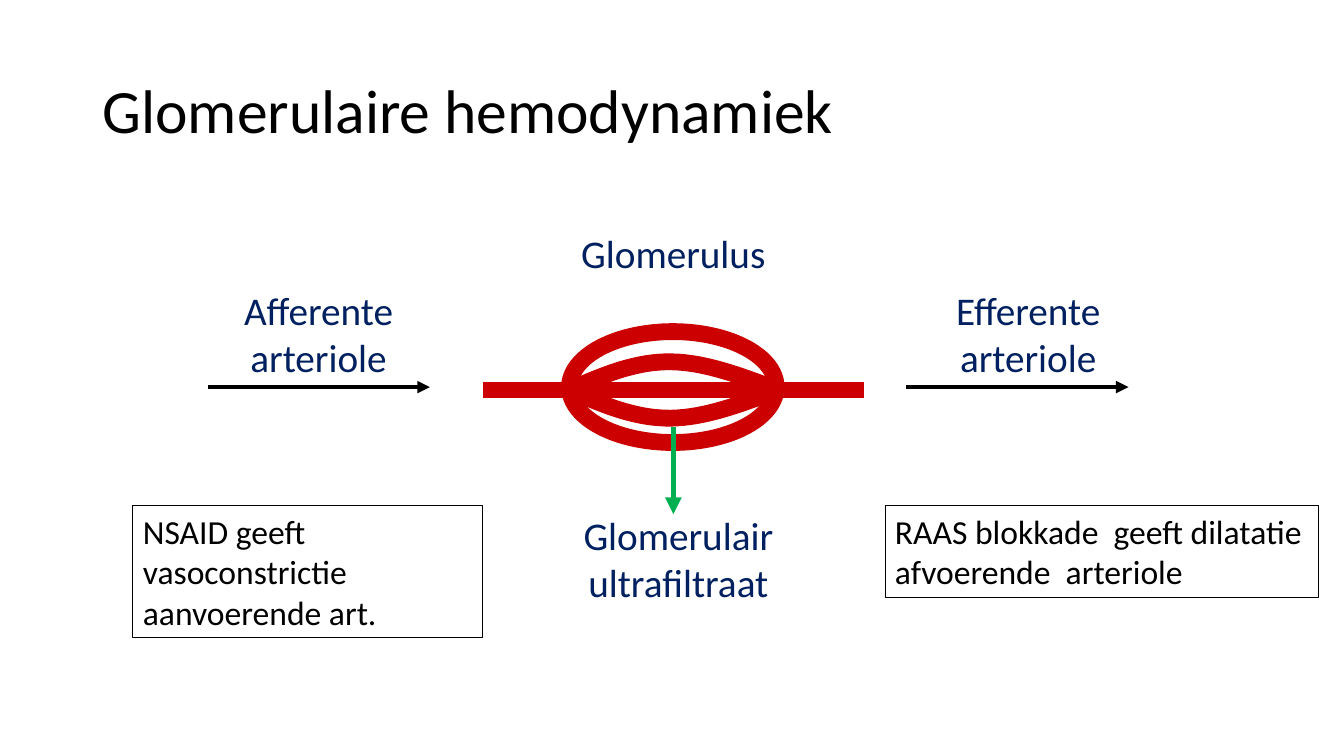
"""Build a slide on the blood flow through the glomerulus."""
from dataclasses import dataclass

import lxml.etree
import pptx
import pptx.dml.color
import pptx.enum.shapes
import pptx.enum.text
import pptx.oxml.ns
import pptx.util

Pt = pptx.util.Pt
qn = pptx.oxml.ns.qn
ALIGN = pptx.enum.text.PP_ALIGN
ANCHOR = pptx.enum.text.MSO_ANCHOR
SHAPE = pptx.enum.shapes.MSO_SHAPE
STRAIGHT = pptx.enum.shapes.MSO_CONNECTOR.STRAIGHT


@dataclass(frozen=True)
class Theme:
    """Colours, font and sizes of the slide."""
    font: str = "Calibri"
    ink: str = "000000"
    paper: str = "FFFFFF"
    label: str = "002060"
    blood: str = "CC0000"
    filtrate: str = "00B050"
    title_size: float = 44
    label_size: float = 28
    note_size: float = 24
    vessel_width: float = 12
    flow_width: float = 3
    filtrate_width: float = 4
    border_width: float = 0.75


THEME = Theme()
AXIS = 278.6
VESSEL_LEFT, TUFT_LEFT, TUFT_RIGHT, VESSEL_RIGHT = 344.9, 406.8, 554.4, 617
CAPILLARY_END = 548.6
CAPILLARY = (
    ((TUFT_LEFT, 0), (429.1, 10), (451.4, 19.4), (475.2, 20.1)),
    ((475.2, 20.1), (499, 20.8), (523.4, 12.2), (CAPILLARY_END, 2.8)),
)
STEPS = 16


def rgb(value):
    """Return a colour object for a hex value."""
    return pptx.dml.color.RGBColor.from_string(value)


def style_text(frame, text, size, colour, align=ALIGN.LEFT):
    """Write one formatted paragraph and return it."""
    frame.word_wrap = True
    frame.text = text
    para = frame.paragraphs[0]
    para.alignment = align
    for span in para.runs:
        span.font.name = THEME.font
        span.font.size = Pt(size)
        span.font.color.rgb = rgb(colour)
    return para


def style_line(shape, colour, width):
    """Set the colour and width of an outline."""
    shape.line.color.rgb = rgb(colour)
    shape.line.width = Pt(width)


def add_title(page, text):
    """Place and fill the title placeholder."""
    title = page.shapes.title
    title.left, title.top, title.width, title.height = Pt(66), Pt(28.8), Pt(828), Pt(104.4)
    title.text_frame.vertical_anchor = ANCHOR.MIDDLE
    para = style_text(title.text_frame, text, THEME.title_size, THEME.ink)
    para.line_spacing = 0.9


def add_label(page, text, left, top, height=74.9):
    """Add a centred caption."""
    box = page.shapes.add_textbox(Pt(left), Pt(top), Pt(204.5), Pt(height))
    style_text(box.text_frame, text, THEME.label_size, THEME.label, ALIGN.CENTER)


def add_note(page, text, left, width, height):
    """Add a bordered remark."""
    box = page.shapes.add_shape(SHAPE.RECTANGLE, Pt(left), Pt(361.4), Pt(width), Pt(height))
    box.shadow.inherit = False
    box.fill.solid()
    box.fill.fore_color.rgb = rgb(THEME.paper)
    style_line(box, THEME.ink, THEME.border_width)
    box.text_frame.vertical_anchor = ANCHOR.TOP
    style_text(box.text_frame, text, THEME.note_size, THEME.ink)


def add_line(shapes, start, end, colour, width):
    """Add a straight line without a shadow."""
    line = shapes.add_connector(STRAIGHT, *(Pt(value) for value in start + end))
    style_line(line, colour, width)
    lxml.etree.SubElement(line._element.spPr, qn("a:effectLst"))
    return line


def add_arrow(page, start, end, colour, width):
    """Add a straight line with an arrowhead at its end."""
    arrow = add_line(page.shapes, start, end, colour, width)
    lxml.etree.SubElement(arrow.line._get_or_add_ln(), qn("a:tailEnd"), type="triangle")


def curve_point(segment, t):
    """Return the point at t on a cubic curve."""
    weights = ((1 - t) ** 3, 3 * t * (1 - t) ** 2, 3 * t * t * (1 - t), t ** 3)
    return tuple(sum(w * point[i] for w, point in zip(weights, segment)) for i in (0, 1))


def add_capillary(shapes, side):
    """Add a curved capillary above (-1) or below (1) the axis."""
    points = [curve_point(segment, step / STEPS)
              for segment in CAPILLARY for step in range(1, STEPS + 1)]
    builder = shapes.build_freeform(Pt(TUFT_LEFT), Pt(AXIS))
    builder.add_line_segments([(Pt(x), Pt(AXIS + side * y)) for x, y in points], close=False)
    capillary = builder.convert_to_shape()
    capillary.shadow.inherit = False
    capillary.fill.background()
    style_line(capillary, THEME.blood, THEME.vessel_width)


def add_glomerulus(page):
    """Add the vessel and its tuft of capillaries as a group."""
    shapes = page.shapes.add_group_shape().shapes
    tuft = shapes.add_shape(SHAPE.OVAL, Pt(TUFT_LEFT), Pt(236.9),
                            Pt(TUFT_RIGHT - TUFT_LEFT), Pt(79.2))
    tuft.shadow.inherit = False
    tuft.fill.background()
    style_line(tuft, THEME.blood, THEME.vessel_width)
    for start, end in ((TUFT_LEFT, CAPILLARY_END), (TUFT_RIGHT, VESSEL_RIGHT),
                       (VESSEL_LEFT, TUFT_LEFT)):
        add_line(shapes, (start, AXIS), (end, AXIS), THEME.blood, THEME.vessel_width)
    for side in (-1, 1):
        add_capillary(shapes, side)


def main():
    """Build and save the deck."""
    deck = pptx.Presentation()
    deck.slide_width, deck.slide_height = Pt(960), Pt(540)
    page = deck.slides.add_slide(deck.slide_layouts[5])
    add_title(page, "Glomerulaire hemodynamiek")
    add_note(page, "RAAS blokkade  geeft dilatatie afvoerende  arteriole", 632.2, 309.6, 65.5)
    add_note(page, "NSAID geeft vasoconstrictie aanvoerende art.", 95, 249.8, 94.3)
    add_glomerulus(page)
    for left in (148.3, 647.3):
        add_arrow(page, (left, 276.5), (left + 158.8, 276.5), THEME.ink, THEME.flow_width)
    add_label(page, "Glomerulus", 378.7, 160.6, 41)
    add_label(page, "Afferente arteriole", 125.3, 200.9)
    add_label(page, "Efferente arteriole", 632.2, 200.9)
    add_arrow(page, (481, 305.3), (481, 367.2), THEME.filtrate, THEME.filtrate_width)
    add_label(page, "Glomerulair ultrafiltraat", 382.3, 361.4)
    deck.save("out.pptx")


if __name__ == "__main__":
    main()
